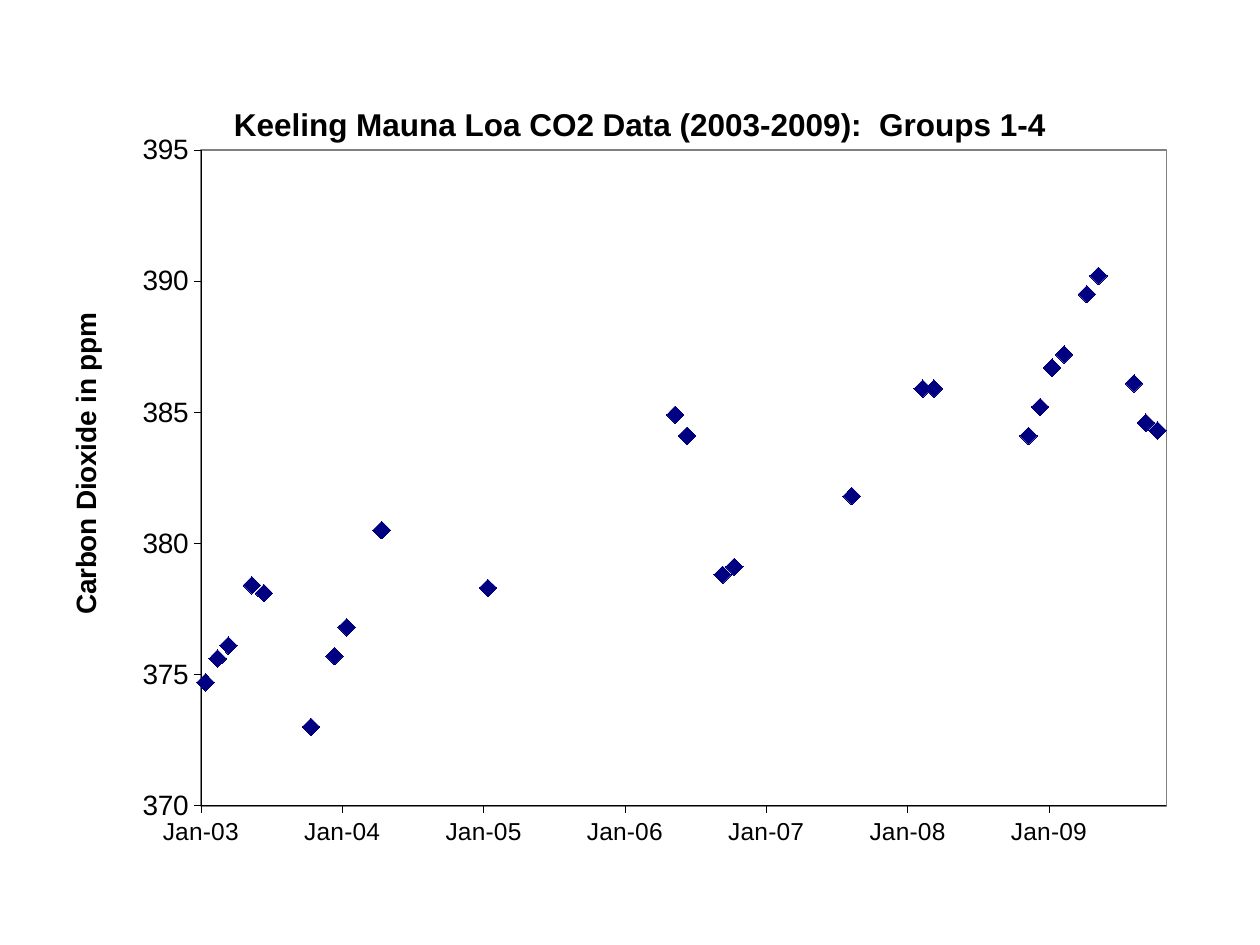
from lxml import etree
from pptx import Presentation
from pptx import util as u
from pptx.chart import data as cd
from pptx.dml.color import RGBColor
from pptx.enum import chart as ch
from pptx.oxml import ns

BLACK = RGBColor(0, 0, 0)
WHITE = RGBColor(255, 255, 255)
GREY = RGBColor(128, 128, 128)
NAVY = RGBColor(0, 0, 128)
FONT = "Arial"

# (year, month, ppm), eight readings for each group
READINGS = [
    (2003, 2, 375.6), (2003, 12, 375.7), (2004, 1, 376.8), (2004, 4, 380.5),
    (2006, 5, 384.9), (2006, 6, 384.1), (2008, 2, 385.9), (2008, 11, 384.1),

    (2003, 2, 375.6), (2003, 3, 376.1), (2005, 1, 378.3), (2006, 9, 378.8),
    (2009, 1, 386.7), (2009, 4, 389.5), (2009, 9, 384.6), (2009, 10, 384.3),

    (2003, 5, 378.4), (2003, 6, 378.1), (2003, 10, 373), (2004, 4, 380.5),
    (2007, 8, 381.8), (2008, 3, 385.9), (2009, 8, 386.1), (2009, 10, 384.3),

    (2003, 1, 374.7), (2006, 6, 384.1), (2006, 10, 379.1), (2008, 12, 385.2),
    (2009, 1, 386.7), (2009, 2, 387.2), (2009, 5, 390.2), (2009, 12, 387.4),
]
MONTH_DAYS = (31, 28, 31, 30, 31, 30, 31, 31, 30, 31, 30, 31)


def mid_month(year, month):
    """Spreadsheet serial number of the 15th of a month, from 2003 on."""
    leap_days = (year - 2001) // 4 + (year % 4 == 0 and month > 2)
    return 37636 + 365 * (year - 2003) + leap_days + sum(MONTH_DAYS[:month - 1])


def style_font(font, size, bold=False, color=BLACK):
    font.name, font.size, font.bold = FONT, u.Pt(size), bold
    font.color.rgb = color


def set_text(tf, text, **fmt):
    tf.text = text
    style_font(tf.paragraphs[0].runs[0].font, **fmt)


def set_layout(element, index, **values):
    """Place a chart part by shares of the chart's size."""
    for old in element.findall(ns.qn("c:layout")):
        element.remove(old)
    layout = etree.Element(ns.qn("c:layout"))
    manual = etree.SubElement(layout, ns.qn("c:manualLayout"))
    for tag, value in values.items():
        etree.SubElement(manual, ns.qn("c:" + tag)).set("val", str(value))
    element.insert(index, layout)


def place_title(title, text, size, x, y):
    set_text(title.text_frame, text, size=size, bold=True)
    set_layout(title._element, 1, xMode="edge", yMode="edge", x=x, y=y)


def style_axis(axis, low, high, step, size, number_format):
    axis.minimum_scale, axis.maximum_scale, axis.major_unit = low, high, step
    axis.has_major_gridlines = False
    axis.major_tick_mark = ch.XL_TICK_MARK.OUTSIDE
    axis.minor_tick_mark = ch.XL_TICK_MARK.NONE
    axis.tick_labels.number_format = number_format
    axis.tick_labels.number_format_is_linked = False
    style_font(axis.tick_labels.font, size)
    axis.format.line.color.rgb = BLACK
    axis.format.line.width = u.Pt(0.25)


def style_plot_area(chart):
    area = chart._chartSpace.chart.plotArea
    set_layout(area, 0, layoutTarget="inner", xMode="edge", yMode="edge",
               x=0.137, y=0.099, w=0.817, h=0.817)
    sp_pr = etree.SubElement(area, ns.qn("c:spPr"))
    fill = etree.SubElement(sp_pr, ns.qn("a:solidFill"))
    line = etree.SubElement(sp_pr, ns.qn("a:ln"), w=str(u.Pt(1)))
    stroke = etree.SubElement(line, ns.qn("a:solidFill"))
    for parent, color in ((fill, WHITE), (stroke, GREY)):
        etree.SubElement(parent, ns.qn("a:srgbClr"), val=str(color))


def style_markers(series):
    series.format.line.fill.background()
    marker = series.marker
    marker.style, marker.size = ch.XL_MARKER_STYLE.DIAMOND, 10
    marker.format.fill.solid()
    marker.format.fill.fore_color.rgb = NAVY
    marker.format.line.color.rgb = NAVY


def add_co2_chart(s, left, top, width, height):
    data = cd.XyChartData()
    points = data.add_series("Series 1")
    for year, month, ppm in READINGS:
        points.add_data_point(mid_month(year, month), ppm)
    chart = s.shapes.add_chart(ch.XL_CHART_TYPE.XY_SCATTER,
                               left, top, width, height, data).chart
    style_font(chart.font, 10)
    chart.has_legend = False
    chart.plots[0].vary_by_categories = False
    style_markers(chart.plots[0].series[0])
    style_axis(chart.category_axis, 37624, 40124, 366, 14, r"[$-409]mmm\-yy;@")
    style_axis(chart.value_axis, 370, 395, 5, 16, "0")
    style_plot_area(chart)
    place_title(chart.chart_title,
                "Keeling Mauna Loa CO2 Data (2003-2009):  Groups 1-4",
                18, 0.16, 0.034)
    place_title(chart.value_axis.axis_title, "Carbon Dioxide in ppm",
                16, 0.02, 0.296)


def main():
    prs = Presentation()
    prs.slide_width, prs.slide_height = u.Inches(10), u.Inches(7.5)
    s = prs.slides.add_slide(prs.slide_layouts[6])
    add_co2_chart(s, u.Inches(0.31), u.Inches(0.56),
                  u.Inches(9.38), u.Inches(6.37))
    prs.save("out.pptx")


if __name__ == "__main__":
    main()
